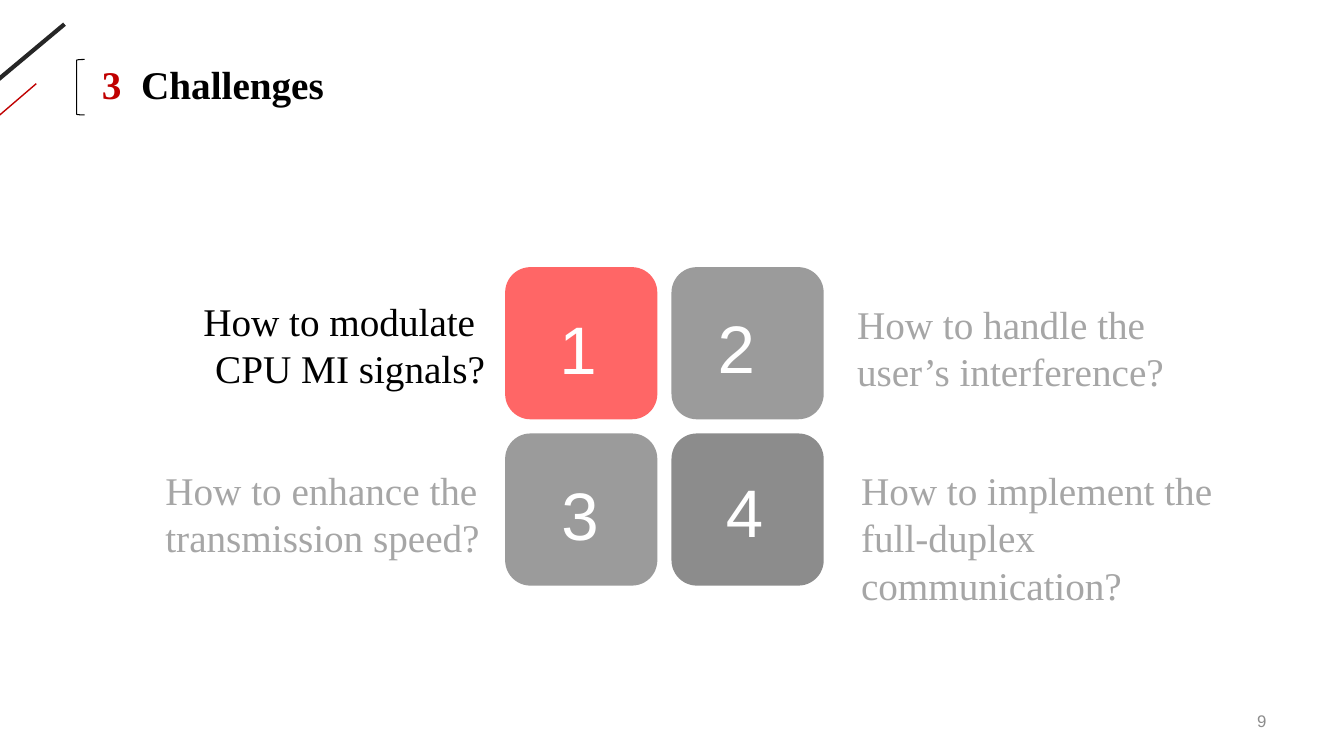
from lxml.etree import SubElement
from pptx import Presentation
from pptx.dml.color import RGBColor
from pptx.enum.shapes import MSO_CONNECTOR, MSO_SHAPE
from pptx.enum.text import MSO_ANCHOR, MSO_AUTO_SIZE, PP_ALIGN
from pptx.oxml.ns import qn
from pptx.util import Pt

EMU_PER_PX = 9144  # 100 px to the inch
COLOURS = {
    "active": "FF0000", "idle": "595959", "idle_dark": "404040",
    "white": "FFFFFF", "black": "000000", "muted": "A6A6A6",
    "accent": "C00000", "stroke": "262626", "page": "8C8C8C",
}
SERIF, SANS = "Times New Roman", "Arial"
TILE, TILE_STEP, GRID_LEFT, GRID_TOP = 151, 165, 501, 265

# number, tile colour, left and top of the digit
TILES = [
    ("1", "active", 545, 300), ("2", "idle", 702, 299),
    ("3", "idle", 547, 465), ("4", "idle_dark", 710, 462),
]
# left, top, width, height, text
MUTED_QUESTIONS = [
    (826, 286, 419, 118, "How to handle the user’s interference?"),
    (830, 451, 472, 142, "How to implement the full-duplex communication?"),
    (140, 451, 361, 118, "How to enhance the transmission speed?"),
]


def px(*lengths):
    return [round(length * EMU_PER_PX) for length in lengths]


def rgb(colour):
    return RGBColor.from_string(COLOURS[colour])


def add_run(paragraph, text, size, font, colour, bold=False):
    run = paragraph.add_run()
    run.text = text
    run.font.size = Pt(size)
    run.font.name = font
    run.font.bold = bold
    run.font.color.rgb = rgb(colour)


def add_label(slide, box, lines, size, font, colour, align=PP_ALIGN.LEFT,
              insets=(10, 5), wrap=True, anchor=MSO_ANCHOR.TOP,
              fit=MSO_AUTO_SIZE.SHAPE_TO_FIT_TEXT):
    frame = slide.shapes.add_textbox(*px(*box)).text_frame
    frame.word_wrap = wrap
    frame.auto_size = fit
    frame.vertical_anchor = anchor
    frame.margin_left, frame.margin_top = px(*insets)
    frame.margin_right, frame.margin_bottom = px(*insets)
    for index, line in enumerate(lines):
        paragraph = frame.add_paragraph() if index else frame.paragraphs[0]
        paragraph.alignment = align
        add_run(paragraph, line, size, font, colour)


def add_tile(slide, left, top, colour):
    """Add a rounded square filled at 60 % opacity."""
    tile = slide.shapes.add_shape(MSO_SHAPE.ROUNDED_RECTANGLE,
                                  *px(left, top, TILE, TILE))
    tile.shadow.inherit = False
    tile.line.fill.background()
    tile.fill.solid()
    tile.fill.fore_color.rgb = rgb(colour)
    fill_colour = next(tile.fill._xPr.iter(qn("a:srgbClr")))
    SubElement(fill_colour, qn("a:alpha"), val="60000")


def add_stroke(slide, ends, colour, width):
    stroke = slide.shapes.add_connector(MSO_CONNECTOR.STRAIGHT, *px(*ends))
    stroke.line.color.rgb = rgb(colour)
    stroke.line.width = Pt(width)
    SubElement(stroke._element.spPr, qn("a:effectLst"))


def add_bracket(slide, box):
    bracket = slide.shapes.add_shape(MSO_SHAPE.LEFT_BRACKET, *px(*box))
    bracket.shadow.inherit = False
    bracket.fill.background()
    bracket.line.color.rgb = rgb("black")
    bracket.line.width = Pt(0.75)


def fill_title(slide, number, heading):
    title = slide.shapes.title
    title.left, title.top, title.width, title.height = px(91, 55, 243, 57)
    frame = title.text_frame
    frame.word_wrap = False
    frame.auto_size = MSO_AUTO_SIZE.SHAPE_TO_FIT_TEXT
    frame.vertical_anchor = MSO_ANCHOR.TOP
    paragraph = frame.paragraphs[0]
    paragraph.alignment = PP_ALIGN.LEFT
    tabs = SubElement(paragraph._p.get_or_add_pPr(), qn("a:tabLst"))
    SubElement(tabs, qn("a:tab"), pos=str(px(39)[0]), algn="l")
    add_run(paragraph, number, 28, SERIF, "accent", bold=True)
    add_run(paragraph, "\t" + heading, 28, SERIF, "black", bold=True)


def main():
    prs = Presentation()
    prs.slide_width, prs.slide_height = px(1333, 750)
    slide = prs.slides.add_slide(prs.slide_layouts[5])

    fill_title(slide, "3", "Challenges")
    add_stroke(slide, (64, 24, -21, 95), "stroke", 3)
    add_stroke(slide, (36, 83, -6, 119), "accent", 1)
    add_bracket(slide, (76, 59, 8, 55))

    for index, (number, colour, digit_left, digit_top) in enumerate(TILES):
        row, column = divmod(index, 2)
        add_tile(slide, GRID_LEFT + column * TILE_STEP,
                 GRID_TOP + row * TILE_STEP, colour)
        add_label(slide, (digit_left, digit_top, 58, 91), [number],
                  48, SANS, "white")

    add_label(slide, (174, 283, 331, 118),
              ["How to modulate ", "CPU MI signals?"], 28, SERIF, "black",
              align=PP_ALIGN.RIGHT, insets=(24, 12), wrap=False)
    for *box, question in MUTED_QUESTIONS:
        add_label(slide, box, [question], 28, SERIF, "muted", insets=(24, 12))

    add_label(slide, (955, 695, 311, 40), ["9"], 12, SANS, "page",
              align=PP_ALIGN.RIGHT, anchor=MSO_ANCHOR.MIDDLE,
              fit=MSO_AUTO_SIZE.NONE)
    prs.save("out.pptx")


if __name__ == "__main__":
    main()
